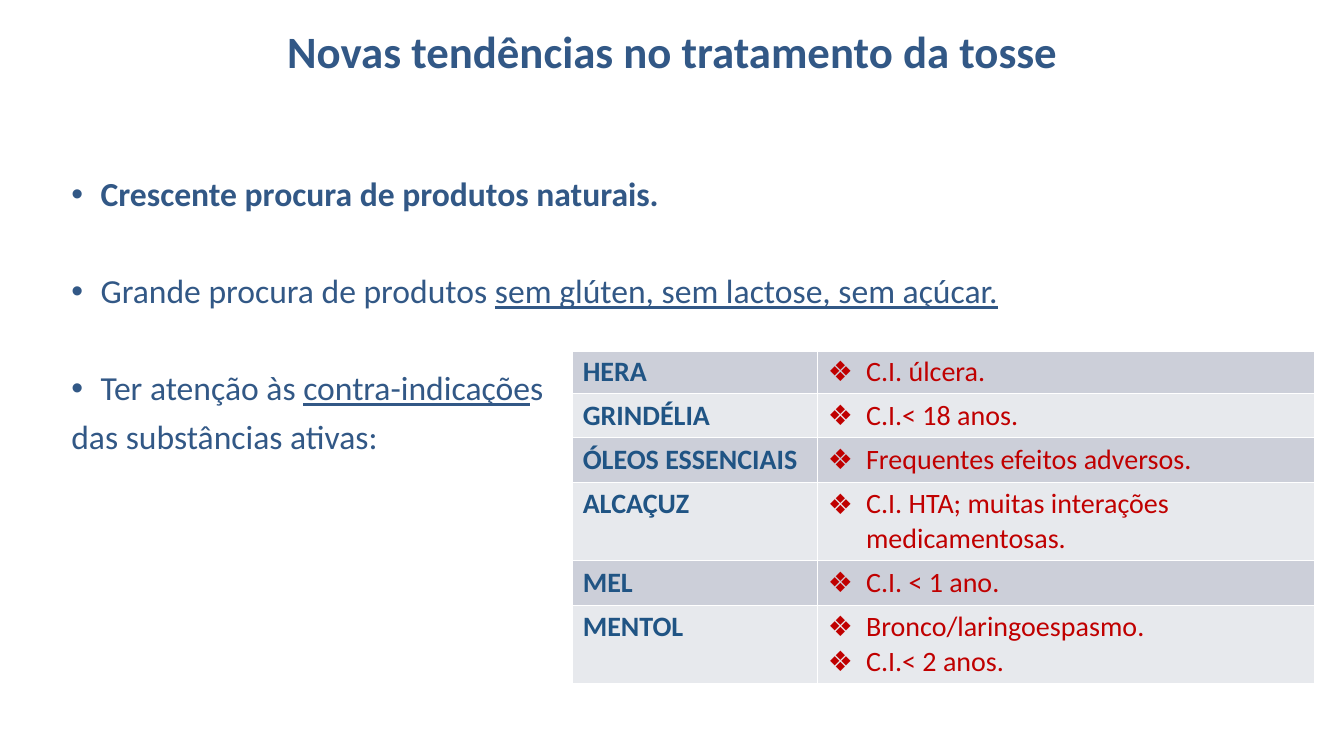
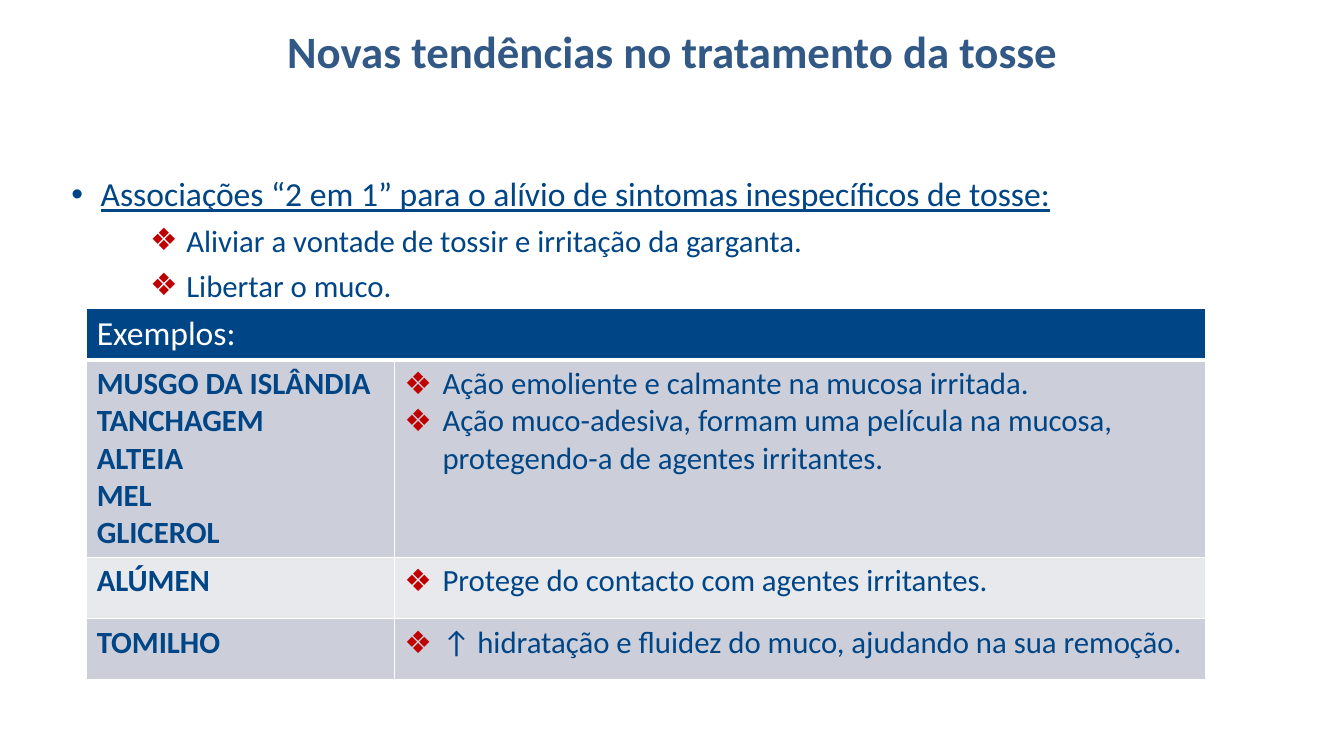
from dataclasses import dataclass

from lxml import etree
from pptx import Presentation
from pptx.dml.color import RGBColor
from pptx.enum import text
from pptx.oxml import ns
from pptx.util import Pt

PX = 9144  # EMU per px, 100 px to the inch


@dataclass(frozen=True)
class Theme:
    font: str = "Calibri"
    blue: str = "325886"
    navy: str = "004586"
    steel: str = "205484"
    red: str = "C00000"
    white: str = "FFFFFF"
    bands: tuple = ("CCCFD9", "E7E9ED")
    title: int = 32
    lead: int = 24
    sub: int = 22
    cell: int = 20
    tiny: int = 1


T = Theme()


@dataclass(frozen=True)
class Style:
    size: int
    color: str
    bold: bool = False
    under: bool = False
    bullet: str = ""
    mark: str = ""  # bullet colour
    left: int = 0
    hang: int = 0
    before: float = 0


@dataclass(frozen=True)
class Para:
    runs: tuple  # plain and underlined runs take turns
    style: Style


@dataclass(frozen=True)
class Grid:
    x: int
    y: int
    cols: tuple  # a third column, at the left, is an empty gutter
    heights: tuple
    rows: tuple  # (names, notes)
    name: Style
    note: Style
    head: str = ""


# Text helpers
def add(parent, tag: str, **attrs):
    return etree.SubElement(parent, ns.qn(tag), attrs)


def format_para(para, style: Style, first: bool) -> None:
    props = para._p.get_or_add_pPr()
    if style.bullet:
        props.set("marL", str(style.left * PX))
        props.set("indent", str(-style.hang * PX))
        add(add(props, "a:buClr"), "a:srgbClr", val=style.mark or style.color)
        add(props, "a:buFont", typeface="Arial")
        add(props, "a:buChar", char=style.bullet)
    para.space_before = Pt(0 if first else style.before)
    font = para.font
    font.name, font.size, font.bold = T.font, Pt(style.size), style.bold
    font.color.rgb = RGBColor.from_string(style.color)
    if style.under:
        font.underline = True


def write(frame, paras: list[Para]) -> None:
    for i, item in enumerate(paras):
        para = frame.paragraphs[0] if i == 0 else frame.add_paragraph()
        format_para(para, item.style, i == 0)
        for j, words in enumerate(item.runs):
            run = para.add_run()
            run.text = words
            if j % 2:
                run.font.underline = True


def lines(words: tuple, style: Style) -> list[Para]:
    return [Para((line,), style) for line in words]


# Slide parts
def add_slide(deck, title: str):
    slide = deck.slides.add_slide(deck.slide_layouts[5])
    shape = slide.shapes.title
    shape.left, shape.top, shape.width, shape.height = (
        v * PX for v in (67, 17, 1200, 66))
    frame = shape.text_frame
    frame.vertical_anchor = text.MSO_ANCHOR.MIDDLE
    write(frame, lines((title,), Style(T.title, T.blue, bold=True)))
    frame.paragraphs[0].alignment = text.PP_ALIGN.CENTER
    return slide


def add_body(slide, height: int, paras: list[Para]) -> None:
    box = slide.shapes.add_textbox(61 * PX, 167 * PX, 1207 * PX, height * PX)
    box.text_frame.word_wrap = True
    write(box.text_frame, paras)


def paint(cell, color: str = "", base: int = 1) -> None:
    props = cell._tc.get_or_add_tcPr()
    for side in "LRTB":
        width = base if side == "B" else 1
        line = add(props, f"a:ln{side}", w=str(Pt(width)))
        add(add(line, "a:solidFill"), "a:srgbClr", val=T.white)
    if color:
        cell.fill.solid()
        cell.fill.fore_color.rgb = RGBColor.from_string(color)
    else:
        cell.fill.background()


def shrink(cell) -> None:
    """Let an empty cell be as low as its row."""
    para = cell.text_frame.paragraphs[0]
    format_para(para, Style(T.tiny, T.white), True)
    add(para._p, "a:endParaRPr", sz=str(T.tiny * 100))


def add_grid(slide, grid: Grid) -> None:
    table = slide.shapes.add_table(
        len(grid.heights), len(grid.cols), grid.x * PX, grid.y * PX,
        sum(grid.cols) * PX, sum(grid.heights) * PX).table
    table.first_row = table.horz_banding = False
    for col, width in zip(table.columns, grid.cols):
        col.width = width * PX
    for row, height in zip(table.rows, grid.heights):
        row.height = height * PX

    # Head row
    gutter = len(grid.cols) - 2
    for cell in table.rows[0].cells:
        paint(cell, T.navy if grid.head else T.white, 3)
        if not grid.head:
            shrink(cell)
    top = table.cell(0, gutter)
    top.merge(table.cell(0, gutter + 1))
    if grid.head:
        write(top.text_frame, lines((grid.head,), Style(T.lead, T.white)))

    # Banded rows
    for i, row in enumerate(grid.rows):
        for j, style in enumerate((grid.name, grid.note)):
            cell = table.cell(i + 1, j + gutter)
            paint(cell, T.bands[i % 2])
            write(cell.text_frame, lines(row[j], style))

    # Gutter, open to the text behind it
    if gutter:
        for i in range(len(grid.rows)):
            paint(table.cell(i + 1, 0))
        table.cell(1, 0).merge(table.cell(len(grid.rows) - 1, 0))


# Content
TITLE = "Novas tendências no tratamento da tosse"
DOT = dict(bullet="•", left=29, hang=29)
GEM = dict(bullet="❖", mark=T.red, left=38, hang=38)

HERBS = Grid(
    52, 334, (516, 243, 493), (13, 43, 44, 44, 78, 44, 78),
    (
        (("HERA",), ("C.I. úlcera.",)),
        (("GRINDÉLIA",), ("C.I.< 18 anos.",)),
        (("ÓLEOS ESSENCIAIS",), ("Frequentes efeitos adversos.",)),
        (("ALCAÇUZ",), ("C.I. HTA; muitas interações medicamentosas.",)),
        (("MEL",), ("C.I. < 1 ano.",)),
        (("MENTOL",), ("Bronco/laringoespasmo.", "C.I.< 2 anos.")),
    ),
    Style(T.cell, T.steel, bold=True), Style(T.cell, T.red, **GEM))

BLENDS = Grid(
    86, 306, (305, 805), (51, 196, 61, 60),
    (
        (("MUSGO DA ISLÂNDIA", "TANCHAGEM", "ALTEIA", "MEL", "GLICEROL"),
         ("Ação emoliente e calmante na mucosa irritada.",
          "Ação muco-adesiva, formam uma película na mucosa, "
          "protegendo-a de agentes irritantes.")),
        (("ALÚMEN",), ("Protege do contacto com agentes irritantes.",)),
        (("TOMILHO",),
         ("↑ hidratação e fluidez do muco, ajudando na sua remoção.",)),
    ),
    Style(T.sub, T.navy, bold=True), Style(T.sub, T.navy, **GEM),
    head="Exemplos:")


def add_trends(deck) -> None:
    slide = add_slide(deck, TITLE)
    point = Style(T.lead, T.blue, before=40.5, **DOT)
    add_body(slide, 310, [
        Para(("Crescente procura de produtos naturais.",),
             Style(T.lead, T.blue, bold=True, **DOT)),
        Para(("Grande procura de produtos ",
              "sem glúten, sem lactose, sem açúcar."), point),
        Para(("Ter atenção às ", "contra-indicaçõe", "s"), point),
        Para(("das substâncias ativas:",), Style(T.lead, T.blue, before=5.8)),
    ])
    add_grid(slide, HERBS)


def add_blends(deck) -> None:
    slide = add_slide(deck, TITLE)
    goal = Style(T.sub, T.navy, bullet="❖", mark=T.red,
                 left=114, hang=36, before=5.8)
    add_body(slide, 138, [
        Para(("Associações “2 em 1” para o alívio de sintomas "
              "inespecíficos de tosse:",),
             Style(T.lead, T.navy, under=True, **DOT)),
        *lines(("Aliviar a vontade de tossir e irritação da garganta.",
                "Libertar o muco."), goal),
    ])
    add_grid(slide, BLENDS)


def main() -> None:
    deck = Presentation()
    deck.slide_width, deck.slide_height = 1333 * PX, 750 * PX
    add_trends(deck)
    add_blends(deck)
    deck.save("out.pptx")


if __name__ == "__main__":
    main()
